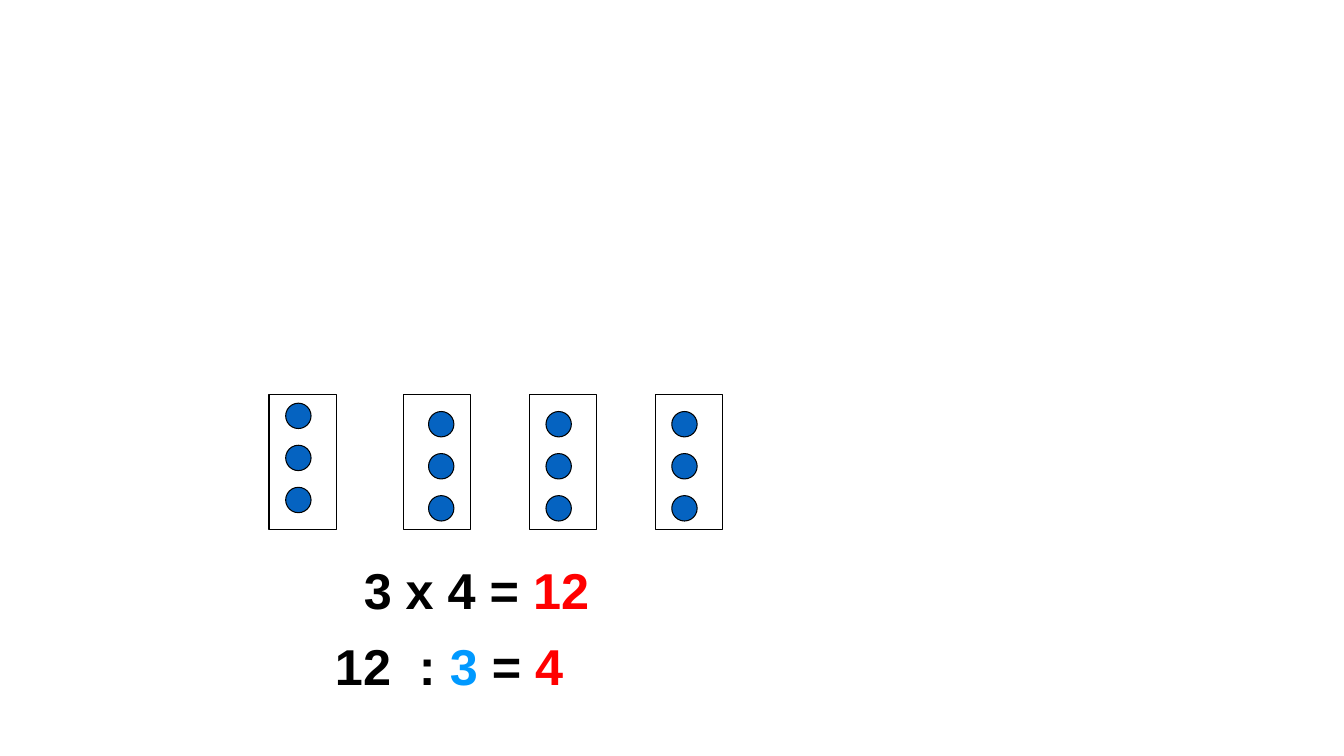
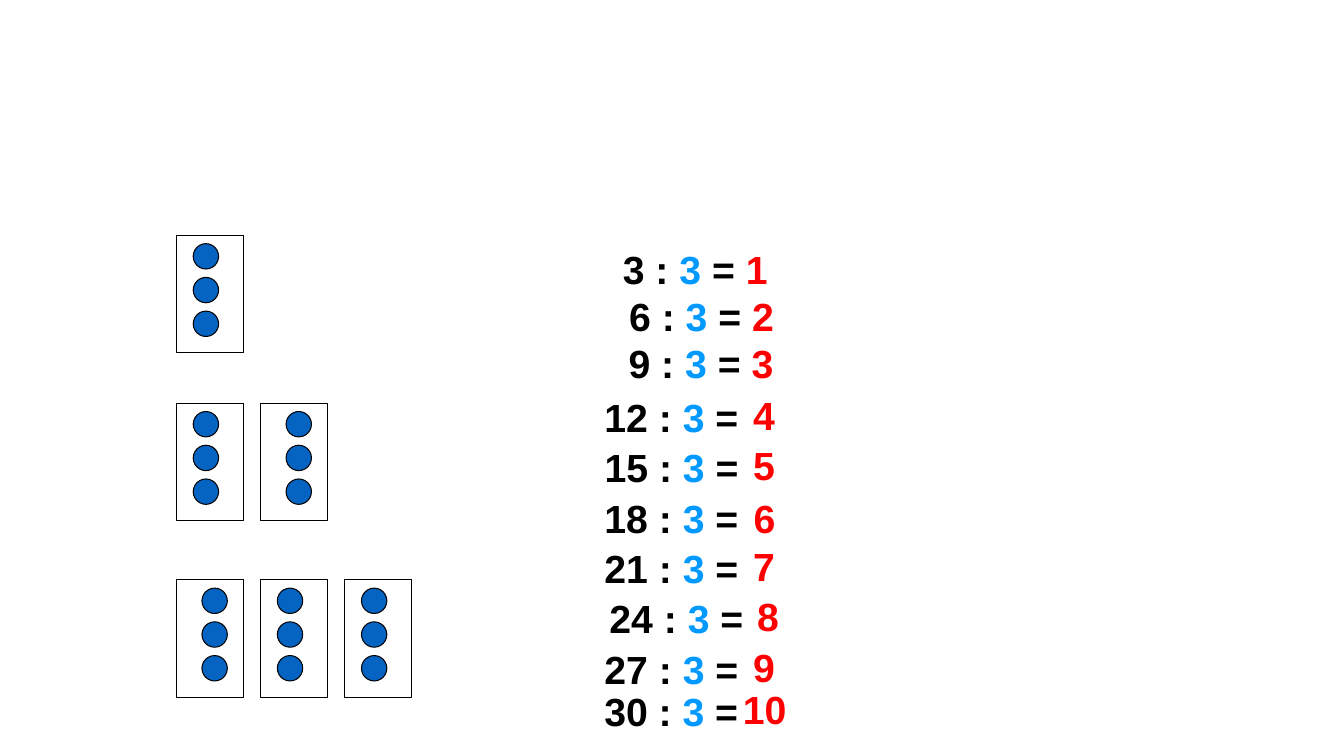
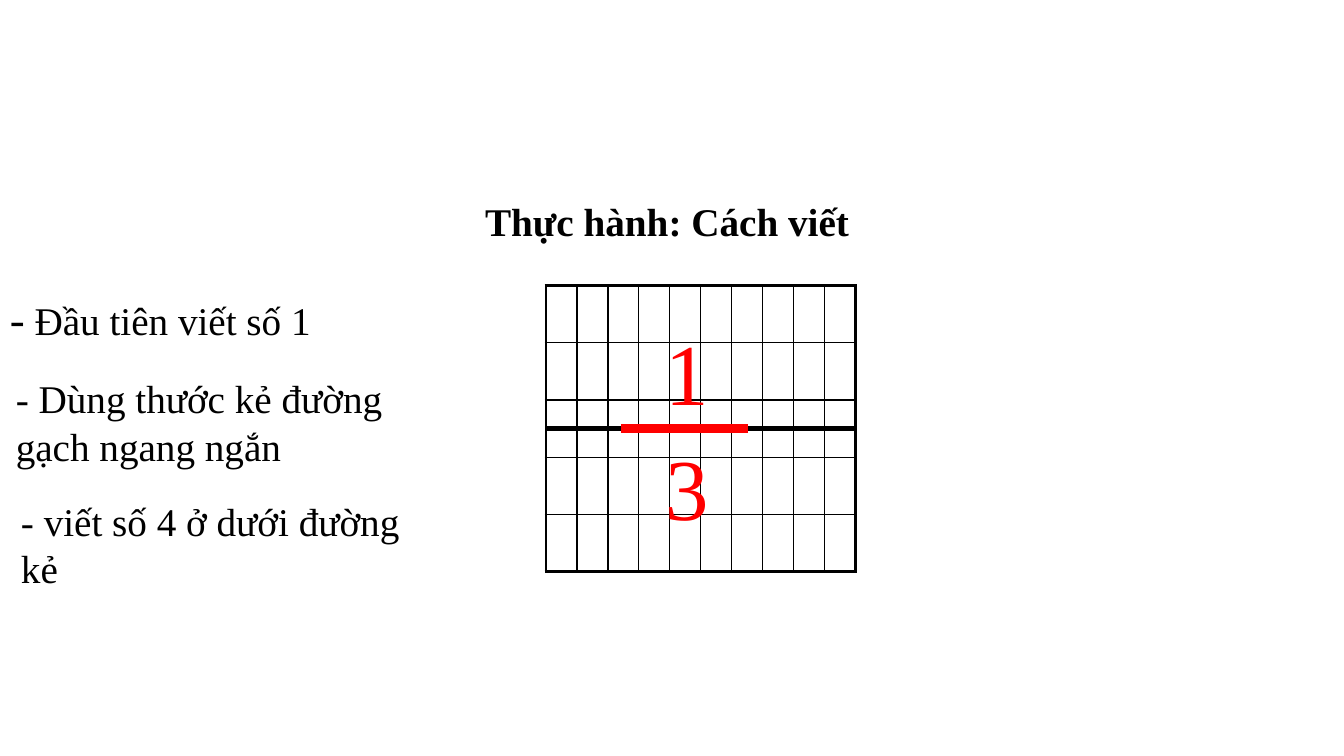
from lxml import etree
from pptx import Presentation
from pptx import util as u
from pptx.dml.color import RGBColor
from pptx.enum import shapes, text
from pptx.oxml.ns import qn

BLACK, WHITE, RED = "000000", "FFFFFF", "FF0000"
DOT_BLUE, DIVISOR_BLUE = "0563C1", "0099FF"
SANS, SERIF = "Arial", "Times New Roman"
TRAY_WIDTH, DOT_SIZE = 1.69, 0.64
NEAR, FAR = 0.42, 0.64


def paint(color_format, value):
    color_format.rgb = RGBColor.from_string(value)


def place(left, top, width, height):
    return [u.Cm(length) for length in (left, top, width, height)]


def add_figure(page, kind, area, fill):
    figure = page.shapes.add_shape(kind, *place(*area))
    figure.shadow.inherit = False
    figure.fill.solid()
    paint(figure.fill.fore_color, fill)
    paint(figure.line.color, BLACK)
    figure.line.width = u.Pt(0.75)


def add_tray(page, left, top, height, dot_inset, dot_drop, dot_step):
    add_figure(page, shapes.MSO_SHAPE.RECTANGLE, (left, top, TRAY_WIDTH, height), WHITE)
    for index in range(3):
        area = (left + dot_inset, top + dot_drop + index * dot_step, DOT_SIZE, DOT_SIZE)
        add_figure(page, shapes.MSO_SHAPE.OVAL, area, DOT_BLUE)


def add_spans(para, spans):
    for words, color in spans:
        span = para.add_run()
        span.text = words
        paint(span.font.color, color)


def style_para(para, font, size, bold, align):
    para.font.name = font
    para.font.size = u.Pt(size)
    para.font.bold = bold
    para.alignment = align


def add_text(page, area, spans, size, font=SANS, bold=True, align=text.PP_ALIGN.CENTER):
    box = page.shapes.add_textbox(*place(*area))
    box.text_frame.word_wrap = True
    box.text_frame.auto_size = text.MSO_AUTO_SIZE.SHAPE_TO_FIT_TEXT
    para = box.text_frame.paragraphs[0]
    style_para(para, font, size, bold, align)
    add_spans(para, spans)
    return para


def add_plain_text(page, area, words, size, color=BLACK):
    return add_text(page, area, [(words, color)], size, SERIF, False, text.PP_ALIGN.LEFT)


def add_rule(page, start, end, top, color, width):
    rule = page.shapes.add_connector(
        shapes.MSO_CONNECTOR.STRAIGHT, u.Cm(start), u.Cm(top), u.Cm(end), u.Cm(top))
    paint(rule.line.color, color)
    rule.line.width = u.Pt(width)
    etree.SubElement(rule._element.spPr, qn("a:effectLst"))


def set_border(cell, side, width):
    border = etree.SubElement(cell._tc.get_or_add_tcPr(), qn("a:" + side), w=str(u.Pt(width)))
    fill = etree.SubElement(border, qn("a:solidFill"))
    etree.SubElement(fill, qn("a:srgbClr"), val=BLACK)


def add_writing_grid(page, left, top, rows, columns, row_height, column_width):
    area = place(left, top, columns * column_width, rows * row_height)
    table = page.shapes.add_table(rows, columns, *area).table
    table.first_row = table.horz_banding = False
    for column in table.columns:
        column.width = u.Cm(column_width)
    for r, row in enumerate(table.rows):
        row.height = u.Cm(row_height)
        for c, cell in enumerate(row.cells):
            outer = {"lnL": c == 0, "lnR": c == columns - 1, "lnT": r == 0, "lnB": r == rows - 1}
            for side, is_outer in outer.items():
                set_border(cell, side, 2.25 if is_outer else 1)
            cell.fill.background()


def division(dividend, answer=""):
    spans = [(f"{dividend} : ", BLACK), ("3", DIVISOR_BLUE), (" =", BLACK)]
    return spans + [(f" {answer}", RED)] if answer else spans


def build_groups(deck):
    page = deck.slides.add_slide(deck.slide_layouts[6])
    trays = [(6.78, NEAR, 0.21), (10.16, FAR, 0.42), (13.34, NEAR, 0.42), (16.51, NEAR, 0.42)]
    for left, inset, drop in trays:
        add_tray(page, left, 9.95, 3.39, inset, drop, 1.06)
    add_text(page, (5.56, 13.97, 12.9, 1.78), [("3 x 4 =", BLACK), (" 12", RED)], 36)
    para = add_text(page, (5.92, 15.88, 10.8, 1.78),
                    [("12", BLACK), (" ", BLACK)] + division("", 4), 36)
    para.runs[1].font._element.set("spc", "0")


def build_division_table(deck):
    page = deck.slides.add_slide(deck.slide_layouts[6])
    tray_rows = [(5.93, [NEAR]), (10.16, [NEAR, FAR]), (14.61, [FAR, NEAR, NEAR])]
    for top, insets in tray_rows:
        for index, inset in enumerate(insets):
            add_tray(page, 4.45 + index * 2.12, top, 2.96, inset, 0.21, 0.85)

    for index, (left, width) in enumerate([(14.66, 5.72), (15.24, 4.88), (15.44, 4.45)]):
        answer = index + 1
        area = (left, 6.05 + index * 1.19, width, 1.44)
        add_text(page, area, division(answer * 3, answer), 28)

    lower_rows = [
        (9.78, 14.28, 5.28, 18.62, 1.27, 0.05),
        (11.05, 13.65, 6.55, 18.62, 1.27, 0.05),
        (12.32, 14.28, 5.28, 18.42, 1.7, 0),
        (13.59, 14.48, 4.88, 18.62, 1.27, 0.05),
        (14.86, 15.04, 4.01, 18.62, 1.47, 0.05),
        (16.13, 14.28, 5.28, 18.62, 1.27, 0.05),
        (17.2, 14.69, 4.45, 18.42, 1.7, 0.05),
    ]
    for answer, (top, left, width, answer_left, answer_width, lift) in enumerate(lower_rows, 4):
        add_text(page, (left, top, width, 1.44), division(answer * 3), 28)
        area = (answer_left, top - lift, answer_width, 1.44)
        add_text(page, area, [(str(answer), RED)], 28)


def build_writing_practice(deck):
    page = deck.slides.add_slide(deck.slide_layouts[5])
    title = page.shapes.title
    title.left, title.top, title.width, title.height = place(5.38, 2.97, 22.86, 3.18)
    frame = title.text_frame
    frame.margin_left = frame.margin_right = frame.margin_bottom = 0
    frame.vertical_anchor = text.MSO_ANCHOR.BOTTOM
    frame.auto_size = text.MSO_AUTO_SIZE.NONE
    para = frame.paragraphs[0]
    style_para(para, SERIF, 28, True, text.PP_ALIGN.CENTER)
    add_spans(para, [("Thực hành: Cách viết", BLACK)])

    add_writing_grid(page, 13.76, 7.2, 5, 10, 1.44, 0.78)
    add_plain_text(page, (16.51, 7.9, 1.47, 2.9), "1", 62, RED)
    add_rule(page, 13.76, 21.59, 10.8, BLACK, 3)
    add_rule(page, 15.66, 18.84, 10.8, RED, 6)
    add_plain_text(page, (16.51, 10.8, 1.9, 2.9), "3", 62, RED)

    first_step = add_text(page, (0, 7.2, 12.5, 1.6),
                          [("-", BLACK), (" Đầu tiên viết số 1", BLACK)],
                          28, SERIF, False, text.PP_ALIGN.LEFT)
    first_step.runs[0].font.size = u.Pt(32)
    add_plain_text(page, (0.15, 9.32, 10.44, 2.64), "- Dùng thước kẻ đường gạch ngang ngắn", 28)
    add_plain_text(page, (0.28, 12.4, 10.44, 2.64), "- viết số 4 ở dưới đường kẻ", 28)


def main():
    deck = Presentation()
    deck.slide_width, deck.slide_height = u.Cm(33.87), u.Cm(19.05)
    build_groups(deck)
    build_division_table(deck)
    build_writing_practice(deck)
    deck.save("out.pptx")


if __name__ == "__main__":
    main()
